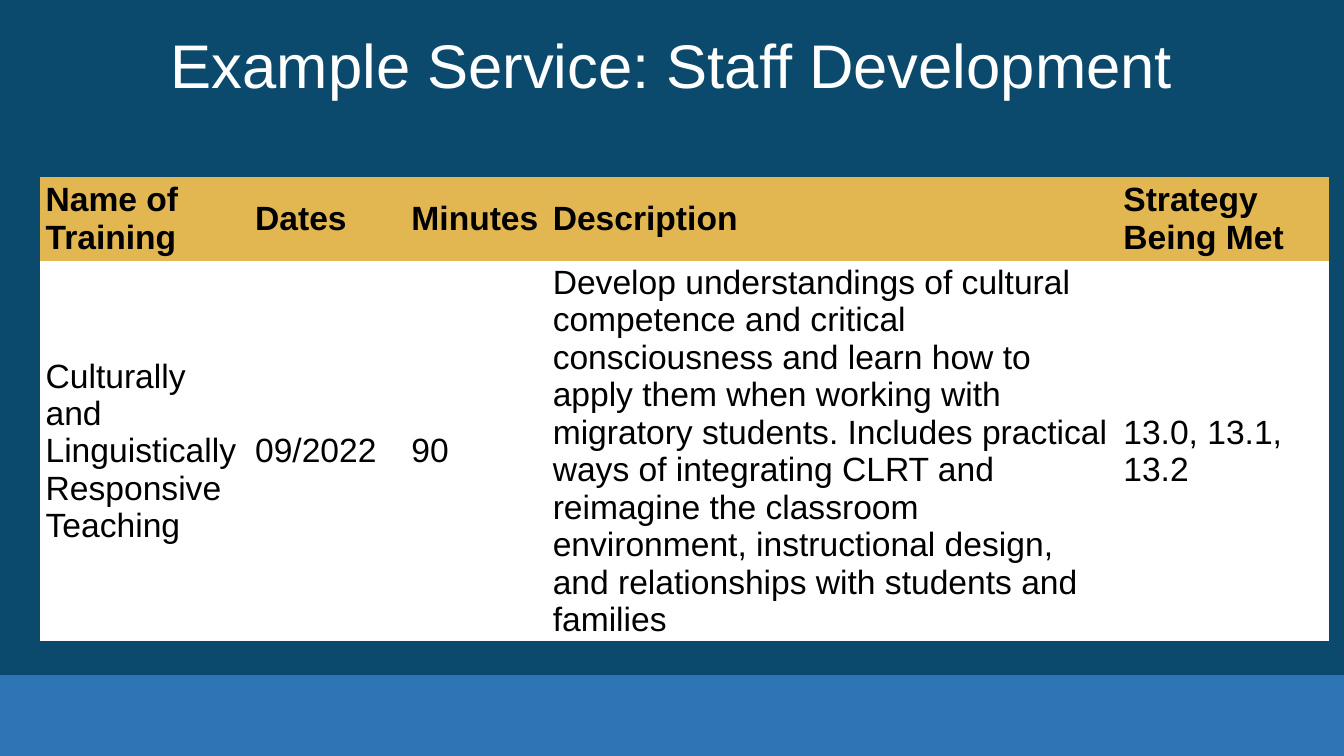
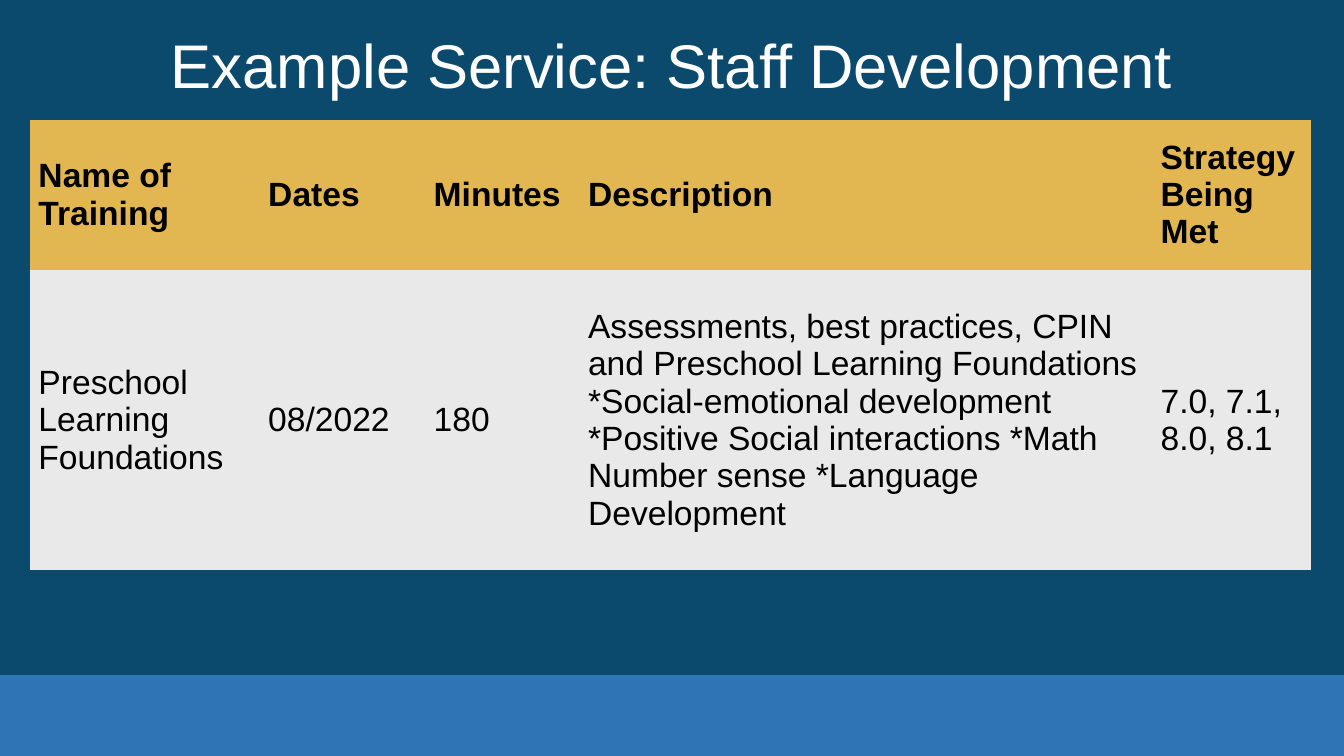
from dataclasses import dataclass

import pptx
import pptx.dml.color
import pptx.enum.shapes
import pptx.enum.text
import pptx.oxml.ns
import pptx.util

Cm = pptx.util.Cm
ALIGN = pptx.enum.text.PP_ALIGN
MIDDLE = pptx.enum.text.MSO_ANCHOR.MIDDLE
PLAIN_TABLE_STYLE = "{2D5ABB26-0587-4C30-8999-92F81FD0307C}"  # no borders, no banding


@dataclass(frozen=True)
class Theme:
    background: str = "0C4A6D"
    band: str = "2E75B6"
    header: str = "E2B751"
    white: str = "FFFFFF"
    grey: str = "E9E9E9"
    ink: str = "000000"
    font: str = "Arial"
    title_size: int = 44
    table_size: int = 24


def paint(fill, color):
    fill.solid()
    fill.fore_color.rgb = pptx.dml.color.RGBColor.from_string(color)


def write(frame, text, *, font, size, color, bold=False, align=ALIGN.LEFT, spacing=None):
    paragraph = frame.paragraphs[0]
    paragraph.alignment = align
    paragraph.line_spacing = spacing
    run = paragraph.add_run()
    run.text = text
    run.font.name = font
    run.font.size = pptx.util.Pt(size)
    run.font.bold = bold
    run.font.color.rgb = pptx.dml.color.RGBColor.from_string(color)


class Deck:
    WIDTH, HEIGHT = Cm(33.87), Cm(19.05)
    BAND_HEIGHT = Cm(2.04)

    def __init__(self, theme):
        self.theme = theme
        self.presentation = pptx.Presentation()
        self.presentation.slide_width = self.WIDTH
        self.presentation.slide_height = self.HEIGHT
        paint(self.presentation.slide_master.background.fill, theme.background)
        self.slide = None

    def start_slide(self, title):
        title_only = self.presentation.slide_layouts.get_by_name("Title Only")
        self.slide = self.presentation.slides.add_slide(title_only)
        self.add_band()
        self.set_title(title)

    def add_band(self):
        band = self.slide.shapes.add_shape(
            pptx.enum.shapes.MSO_SHAPE.RECTANGLE,
            0, self.HEIGHT - self.BAND_HEIGHT, self.WIDTH, self.BAND_HEIGHT)
        band.shadow.inherit = False
        paint(band.fill, self.theme.band)
        band.line.fill.background()

    def set_title(self, text):
        title = self.slide.shapes.title
        title.left, title.top = Cm(0.43), 0
        title.width, title.height = Cm(33.02), Cm(3.45)
        title.text_frame.vertical_anchor = MIDDLE
        title.text_frame.auto_size = pptx.enum.text.MSO_AUTO_SIZE.NONE
        write(title.text_frame, text, font=self.theme.font, size=self.theme.title_size,
              color=self.theme.white, align=ALIGN.CENTER, spacing=0.9)

    def add_training_table(self, rows, left, top, widths, heights, margins, body_fill):
        """Sizes are in centimetres; margins are (horizontal, vertical)."""
        table = self.slide.shapes.add_table(
            len(rows), len(widths), Cm(left), Cm(top),
            Cm(sum(widths)), Cm(sum(heights))).table
        table.horz_banding = False
        style_id = table._tbl.tblPr.find(pptx.oxml.ns.qn("a:tableStyleId"))
        style_id.text = PLAIN_TABLE_STYLE
        for column, width in zip(table.columns, widths):
            column.width = Cm(width)
        for row, height in zip(table.rows, heights):
            row.height = Cm(height)
        for r, texts in enumerate(rows):
            is_header = r == 0
            for c, text in enumerate(texts):
                cell = table.cell(r, c)
                cell.vertical_anchor = MIDDLE
                cell.margin_left = cell.margin_right = Cm(margins[0])
                cell.margin_top = cell.margin_bottom = Cm(margins[1])
                paint(cell.fill, self.theme.header if is_header else body_fill)
                write(cell.text_frame, text, font=self.theme.font,
                      size=self.theme.table_size, color=self.theme.ink, bold=is_header)


def main():
    theme = Theme()
    deck = Deck(theme)
    title = "Example Service: Staff Development"
    headings = ["Name of Training", "Dates", "Minutes", "Description", "Strategy Being Met"]

    deck.start_slide(title)
    teaching = [
        "Culturally and Linguistically Responsive Teaching", "09/2022", "90",
        "Develop understandings of cultural competence and critical consciousness and "
        "learn how to apply them when working with migratory students. Includes practical "
        "ways of integrating CLRT and reimagine the classroom environment, instructional "
        "design, and relationships with students and families",
        "13.0, 13.1, 13.2"]
    deck.add_training_table(
        [headings, teaching], left=1.02, top=4.45,
        widths=[5.28, 3.94, 3.56, 14.38, 5.31], heights=[2.13, 9.58],
        margins=(0.13, 0.07), body_fill=theme.white)

    deck.start_slide(title)
    preschool = [
        "Preschool Learning Foundations", "08/2022", "180",
        "Assessments, best practices, CPIN and Preschool Learning Foundations "
        "*Social-emotional development *Positive Social interactions "
        "*Math Number sense *Language Development",
        "7.0, 7.1, 8.0, 8.1"]
    deck.add_training_table(
        [headings, preschool], left=0.76, top=3.02,
        widths=[5.79, 4.17, 3.89, 14.43, 4.01], heights=[3.78, 7.57],
        margins=(0.21, 0.11), body_fill=theme.grey)

    deck.presentation.save("out.pptx")


if __name__ == "__main__":
    main()
